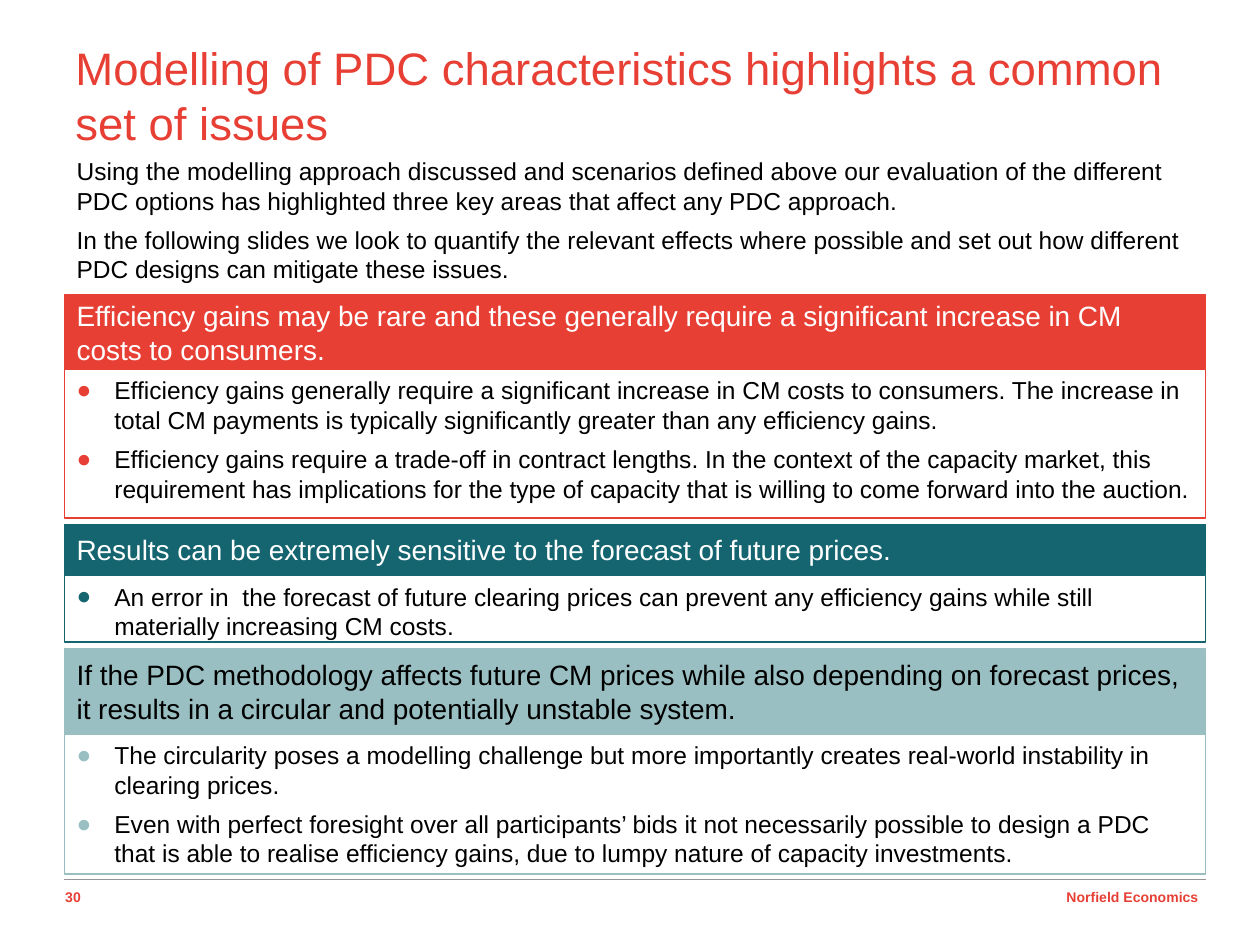
from pptx import Presentation
from pptx.dml.color import RGBColor
from pptx.enum import shapes, text
from pptx.oxml import ns
from pptx.util import Pt
from lxml import etree

RED, TEAL, PALE, GREY = "E83F35", "156570", "99BFC2", "969696"
WHITE, BLACK = "FFFFFF", "000000"
LEFT, WIDTH = 36.7, 652.3
INDENT = 21.6

INTRO = [
    "Using the modelling approach discussed and scenarios defined above our evaluation of the different PDC options has highlighted three key areas that affect any PDC approach.",
    "In the following slides we look to quantify the relevant effects where possible and set out how different PDC designs can mitigate these issues.",
]

# heading, colour, heading text colour, (top, height) of heading, (top, height) of body, points
ISSUES = [
    ("Efficiency gains may be rare and these generally require a significant increase in CM costs to consumers.",
     RED, WHITE, (168.5, 42.5), (211, 85),
     ["Efficiency gains generally require a significant increase in CM costs to consumers. The increase in total CM payments is typically significantly greater than any efficiency gains.",
      "Efficiency gains require a trade-off in contract lengths. In the context of the capacity market, this requirement has implications for the type of capacity that is willing to come forward into the auction."]),
    ("Results can be extremely sensitive to the forecast of future prices.",
     TEAL, WHITE, (299.8, 28.5), (328.8, 38),
     ["An error in  the forecast of future clearing prices can prevent any efficiency gains while still materially increasing CM costs."]),
    ("If the PDC methodology affects future CM prices while also depending on forecast prices, it results in a circular and potentially unstable system.",
     PALE, BLACK, (370.8, 48.5), (419.5, 80),
     ["The circularity poses a modelling challenge but more importantly creates real-world instability in clearing prices.",
      "Even with perfect foresight over all participants’ bids it not necessarily possible to design a PDC that is able to realise efficiency gains, due to lumpy nature of capacity investments."]),
]


def rgb(value):
    return RGBColor.from_string(value)


def write(shape, lines, size, colour, bold=False, gap=0,
          align=text.PP_ALIGN.LEFT, anchor=text.MSO_ANCHOR.TOP):
    """Fill the shape with one paragraph for each line."""
    frame = shape.text_frame
    frame.word_wrap = True
    frame.vertical_anchor = anchor
    for index, line in enumerate(lines):
        paragraph = frame.add_paragraph() if index else frame.paragraphs[0]
        paragraph.alignment = align
        paragraph.space_after = Pt(gap)
        run = paragraph.add_run()
        run.text = line
        run.font.color.rgb = rgb(colour)
        for name, value in {"name": "Arial", "size": Pt(size), "bold": bold}.items():
            setattr(run.font, name, value)


def add_text(slide, left, top, width, height, lines, size, colour, **style):
    box = slide.shapes.add_textbox(Pt(left), Pt(top), Pt(width), Pt(height))
    write(box, lines, size, colour, **style)


def add_panel(slide, top, height, colour, filled):
    panel = slide.shapes.add_shape(shapes.MSO_SHAPE.RECTANGLE,
                                   Pt(LEFT), Pt(top), Pt(WIDTH), Pt(height))
    panel.shadow.inherit = False
    panel.line.color.rgb = rgb(colour)
    panel.line.width = Pt(0.75)
    if filled:
        panel.fill.solid()
        panel.fill.fore_color.rgb = rgb(colour)
    else:
        panel.fill.background()
    return panel


def add_bullets(shape, colour):
    for paragraph in shape.text_frame.paragraphs:
        props = paragraph._p.get_or_add_pPr()
        props.set("marL", str(Pt(INDENT)))
        props.set("indent", str(-Pt(INDENT)))
        bullet_colour = etree.SubElement(props, ns.qn("a:buClr"))
        etree.SubElement(bullet_colour, ns.qn("a:srgbClr"), val=colour)
        etree.SubElement(props, ns.qn("a:buFont"), typeface="Arial")
        etree.SubElement(props, ns.qn("a:buChar"), char="●")


def add_issue(slide, heading, colour, heading_colour, heading_span, body_span, points):
    header = add_panel(slide, *heading_span, colour, filled=True)
    write(header, [heading], 16, heading_colour, anchor=text.MSO_ANCHOR.MIDDLE)
    body = add_panel(slide, *body_span, colour, filled=False)
    write(body, points, 14, BLACK, gap=5.6)
    add_bullets(body, colour)


def add_rule(slide, top):
    rule = slide.shapes.add_connector(shapes.MSO_CONNECTOR.STRAIGHT,
                                      Pt(LEFT), Pt(top), Pt(LEFT + WIDTH), Pt(top))
    rule.line.color.rgb = rgb(GREY)
    rule.line.width = Pt(0.75)
    etree.SubElement(rule._element.spPr, ns.qn("a:effectLst"))


def main():
    deck = Presentation()
    deck.slide_width, deck.slide_height = Pt(720), Pt(540)
    slide = deck.slides.add_slide(deck.slide_layouts[6])

    add_text(slide, 30.2, 504, 40, 18, ["30"], 8, RED, bold=True)
    add_rule(slide, 502.6)
    add_text(slide, 518.4, 504, 173.6, 16.6, ["Norfield Economics"], 8, RED,
             bold=True, align=text.PP_ALIGN.RIGHT)
    add_text(slide, 36, 20.2, 653.8, 67.7,
             ["Modelling of PDC characteristics highlights a common set of issues"],
             26, RED, anchor=text.MSO_ANCHOR.MIDDLE)
    add_text(slide, LEFT, 85.7, WIDTH, 81.4, INTRO, 14, BLACK, gap=5.6)
    for issue in ISSUES:
        add_issue(slide, *issue)

    deck.save("out.pptx")


if __name__ == "__main__":
    main()
